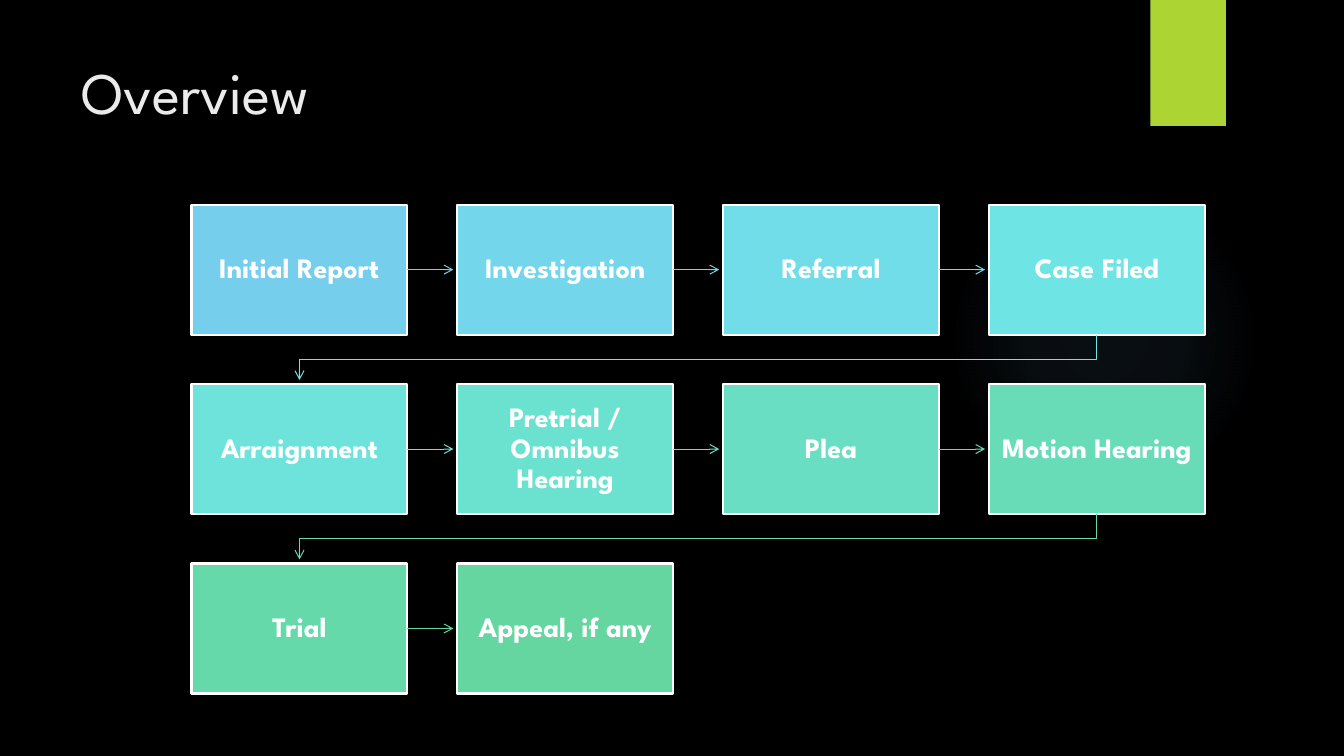
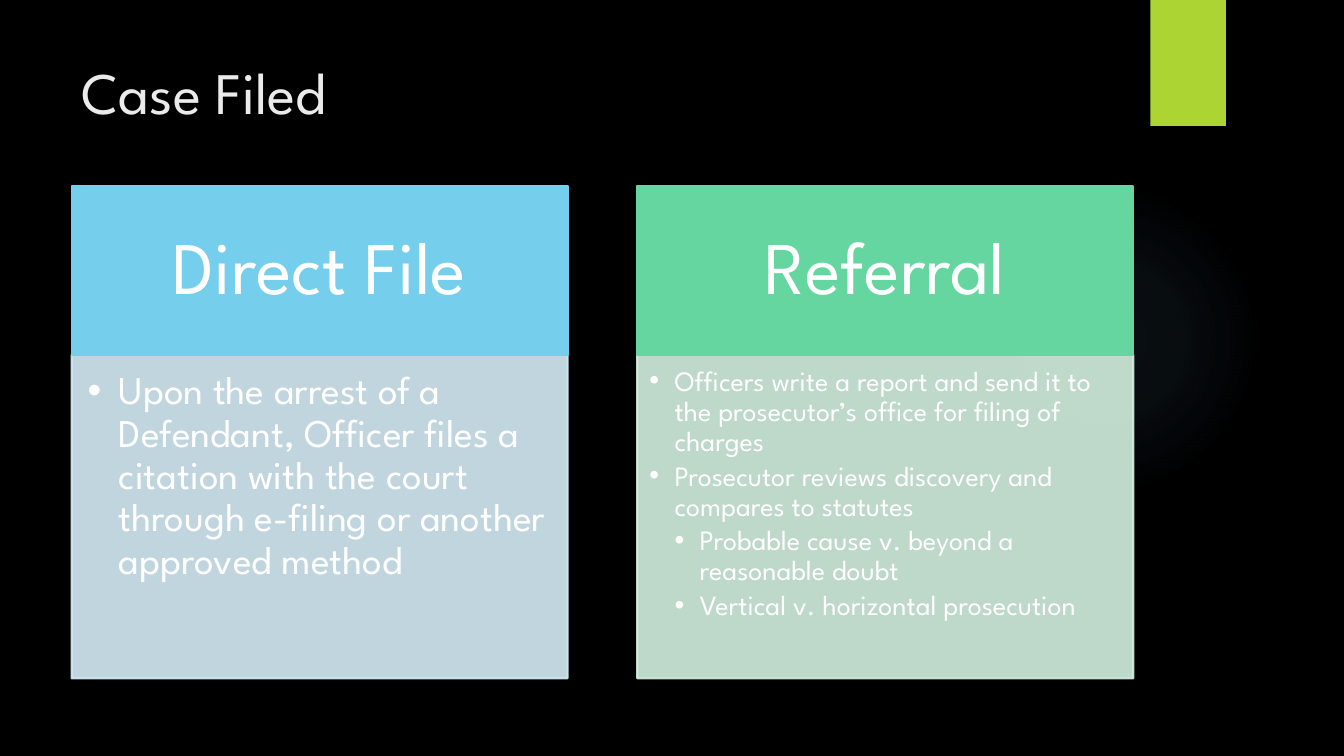
from dataclasses import dataclass

from lxml import etree
from pptx import Presentation
from pptx.dml.color import RGBColor
from pptx.enum.shapes import MSO_CONNECTOR, MSO_SHAPE
from pptx.enum.text import MSO_ANCHOR, MSO_AUTO_SIZE, PP_ALIGN
from pptx.oxml import parse_xml
from pptx.oxml.ns import nsdecls, qn
from pptx.util import Inches, Pt

RECTANGLE, ELLIPSE = MSO_SHAPE.RECTANGLE, MSO_SHAPE.OVAL
STRAIGHT = MSO_CONNECTOR.STRAIGHT
TOP, MIDDLE = MSO_ANCHOR.TOP, MSO_ANCHOR.MIDDLE
LEFT, CENTER = PP_ALIGN.LEFT, PP_ALIGN.CENTER
NO_AUTOFIT = MSO_AUTO_SIZE.NONE
RIGHT_SIDE = 3


@dataclass(frozen=True)
class Theme:
    font: str = "League Spartan"
    background: str = "000000"
    title: str = "EBEBEB"
    text: str = "FFFFFF"
    flag: str = "ACD433"
    glow: str = "7AC4F0"
    title_size: int = 42
    step_size: int = 20
    header_size: int = 53
    outline: float = 1.5
    arrow: float = 0.75


THEME = Theme()

# Content: each step has its text, box colour and outgoing arrow colour
STEPS = [
    ("Initial Report", "75CEEC", "75CEEC"),
    ("Investigation", "73D6EA", "73D6EA"),
    ("Referral", "71DDE8", "70DFE7"),
    ("Case Filed", "6FE4E5", "6EE5E2"),
    ("Arraignment", "6DE3DB", "6CE2D5"),
    ("Pretrial / Omnibus Hearing", "6BE1CF", "6ADFC7"),
    ("Plea", "6ADEC3", "68DCBA"),
    ("Motion Hearing", "68DBB7", "67D9AD"),
    ("Trial", "66D9AB", "65D6A0"),
    ("Appeal, if any", "65D6A0", None),
]
PANELS = [
    {
        "header": "Direct File", "color": "75CEEC", "tint": "D6EDF8",
        "size": 28, "indent": 0.31, "insets": (0.16, 0.16, 0.22, 0.24),
        "items": [
            (0, "Upon the arrest of a Defendant, Officer files a citation with "
                "the court through e-filing or another approved method"),
        ],
    },
    {
        "header": "Referral", "color": "65D6A0", "tint": "D3F0DF",
        "size": 20, "indent": 0.25, "insets": (0.12, 0.12, 0.16, 0.17),
        "items": [
            (0, "Officers write a report and send it to the prosecutor’s office "
                "for filing of charges"),
            (0, "Prosecutor reviews discovery and compares to statutes"),
            (1, "Probable cause v. beyond a reasonable doubt"),
            (1, "Vertical v. horizontal prosecution"),
        ],
    },
]

# Grids, in inches
TITLE_AREA = (0.71, 0.5, 10.29, 1.53)
COLUMNS = 4
STEP_WIDTH, STEP_HEIGHT = 2.14, 1.29
STEP_LEFT, STEP_LAST_LEFT, STEP_TOP = 1.9, 9.81, 2.03
COLUMN_PITCH = (STEP_LAST_LEFT - STEP_LEFT) / (COLUMNS - 1)
ROW_PITCH = 1.78
ARROW_GAP = 0.04
PANEL_LEFT, PANEL_TOP, PANEL_WIDTH, PANEL_PITCH = 0.71, 1.85, 4.92, 5.61
HEADER_HEIGHT, LIST_HEIGHT = 1.67, 3.21


def rgb(color):
    return RGBColor.from_string(color)


def place(shape, area):
    shape.left, shape.top, shape.width, shape.height = map(Inches, area)


def write(shape, items, size, color=THEME.text, bold=False, align=CENTER,
          anchor=MIDDLE, insets=(0.1, 0.05, 0.1, 0.05), spacing=0.9,
          indent=None, after=0):
    """Fill a shape with (level, text) paragraphs, bulleted if indent is given."""
    frame = shape.text_frame
    frame.word_wrap = True
    frame.auto_size = NO_AUTOFIT
    frame.vertical_anchor = anchor
    (frame.margin_left, frame.margin_top,
     frame.margin_right, frame.margin_bottom) = map(Inches, insets)
    for index, (level, text) in enumerate(items):
        paragraph = frame.add_paragraph() if index else frame.paragraphs[0]
        paragraph.level = level
        if indent:
            properties = paragraph._p.get_or_add_pPr()
            properties.set("marL", str(Inches(indent * (level + 1))))
            properties.set("indent", str(-Inches(indent)))
            etree.SubElement(properties, qn("a:buChar")).set("char", "•")
        paragraph.alignment = align
        paragraph.line_spacing = spacing
        paragraph.space_before = Pt(0)
        paragraph.space_after = Pt(after)
        run = paragraph.add_run()
        run.text = text
        run.font.name = THEME.font
        run.font.size = Pt(size)
        run.font.bold = bold
        run.font.color.rgb = rgb(color)


def paint(shape, fill, line):
    shape.fill.solid()
    shape.fill.fore_color.rgb = rgb(fill)
    shape.line.color.rgb = rgb(line)
    shape.line.width = Pt(THEME.outline)


def add_block(slide, kind, area, fill, line=None):
    shape = slide.shapes.add_shape(kind, *map(Inches, area))
    shape.shadow.inherit = False
    paint(shape, fill, line or fill)
    if line is None:
        shape.line.fill.background()
    return shape


def style_arrow(shape, color):
    shape.line.color.rgb = rgb(color)
    shape.line.width = Pt(THEME.arrow)
    etree.SubElement(shape.line._get_or_add_ln(), qn("a:tailEnd")).set("type", "arrow")


def set_up_master(presentation, slide):
    """Give the master its background, title area, glow and flag."""
    master = presentation.slide_master
    master.background.fill.solid()
    master.background.fill.fore_color.rgb = rgb(THEME.background)
    place(master.placeholders[0], TITLE_AREA)

    glow = add_block(slide, ELLIPSE, (9.41, 1.83, 3.08, 3.08), THEME.glow)
    stops = "".join(
        f'<a:gs pos="{position}000"><a:srgbClr val="{THEME.glow}">'
        f'<a:alpha val="{alpha}000"/></a:srgbClr></a:gs>'
        for position, alpha in ((0, 7), (36, 6), (69, 0)))
    gradient = parse_xml(
        f'<a:gradFill {nsdecls("a")}><a:gsLst>{stops}</a:gsLst><a:path path="circle">'
        '<a:fillToRect l="50000" t="50000" r="50000" b="50000"/></a:path></a:gradFill>')
    properties = glow._element.spPr
    properties.replace(properties.find(qn("a:solidFill")), gradient)

    flag = add_block(slide, RECTANGLE, (11.41, 0, 0.75, 1.25), THEME.flag)
    for index, shape in enumerate((glow, flag), start=2):
        master.shapes._spTree.insert(index, shape._element)


def add_slide(presentation, layout_name, title):
    layout = presentation.slide_layouts.get_by_name(layout_name)
    slide = presentation.slides.add_slide(layout)
    write(slide.shapes.title, [(0, title)], THEME.title_size, color=THEME.title,
          align=LEFT, anchor=TOP, spacing=1)
    return slide


def add_step_arrow(slide, box, left, top, color):
    middle = Inches(top + STEP_HEIGHT / 2)
    arrow = slide.shapes.add_connector(
        STRAIGHT, Inches(left + STEP_WIDTH), middle,
        Inches(left + COLUMN_PITCH - ARROW_GAP), middle)
    arrow.begin_connect(box, RIGHT_SIDE)
    etree.SubElement(arrow._element.spPr, qn("a:effectLst"))
    style_arrow(arrow, color)
    # The line must stand before the effect list
    properties = arrow._element.spPr
    properties.append(properties.find(qn("a:effectLst")))


def add_row_arrow(slide, left, top, color):
    """Lead from the last box of a row down to the first box of the next."""
    bottom = top + STEP_HEIGHT
    start, end = left + STEP_WIDTH / 2, STEP_LEFT + STEP_WIDTH / 2
    turn = (bottom + top + ROW_PITCH) / 2
    points = [(start, turn), (end, turn), (end, top + ROW_PITCH - ARROW_GAP)]
    builder = slide.shapes.build_freeform(Inches(start), Inches(bottom))
    builder.add_line_segments([(Inches(x), Inches(y)) for x, y in points], close=False)
    arrow = builder.convert_to_shape()
    arrow.shadow.inherit = False
    arrow.fill.background()
    style_arrow(arrow, color)


def fill_overview(slide):
    for index, (text, fill, arrow_color) in enumerate(STEPS):
        row, column = divmod(index, COLUMNS)
        left = STEP_LEFT + column * COLUMN_PITCH
        top = STEP_TOP + row * ROW_PITCH
        box = add_block(slide, RECTANGLE, (left, top, STEP_WIDTH, STEP_HEIGHT),
                        fill, THEME.text)
        write(box, [(0, text)], THEME.step_size, bold=True, insets=(0.11,) * 4)
        if arrow_color is None:
            continue
        if column < COLUMNS - 1:
            add_step_arrow(slide, box, left, top, arrow_color)
        else:
            add_row_arrow(slide, left, top, arrow_color)


def fill_case_filed(slide):
    for index, panel in enumerate(PANELS):
        left = PANEL_LEFT + index * PANEL_PITCH
        header = add_block(slide, RECTANGLE,
                           (left, PANEL_TOP, PANEL_WIDTH, HEADER_HEIGHT),
                           panel["color"], panel["color"])
        write(header, [(0, panel["header"])], THEME.header_size,
              insets=(0.41, 0.24, 0.41, 0.24))

        body = slide.placeholders[index + 1]
        place(body, (left, PANEL_TOP + HEADER_HEIGHT, PANEL_WIDTH, LIST_HEIGHT))
        paint(body, panel["tint"], panel["tint"])
        for color in body._element.spPr.iter(qn("a:srgbClr")):
            etree.SubElement(color, qn("a:alpha")).set("val", "90000")
        write(body, panel["items"], panel["size"], align=LEFT, anchor=TOP,
              insets=panel["insets"], indent=panel["indent"],
              after=0.15 * panel["size"])


def main():
    presentation = Presentation()
    presentation.slide_width, presentation.slide_height = Inches(13.33), Inches(7.5)
    overview = add_slide(presentation, "Title Only", "Overview")
    set_up_master(presentation, overview)
    fill_overview(overview)
    fill_case_filed(add_slide(presentation, "Two Content", "Case Filed"))
    presentation.save("out.pptx")


if __name__ == "__main__":
    main()
